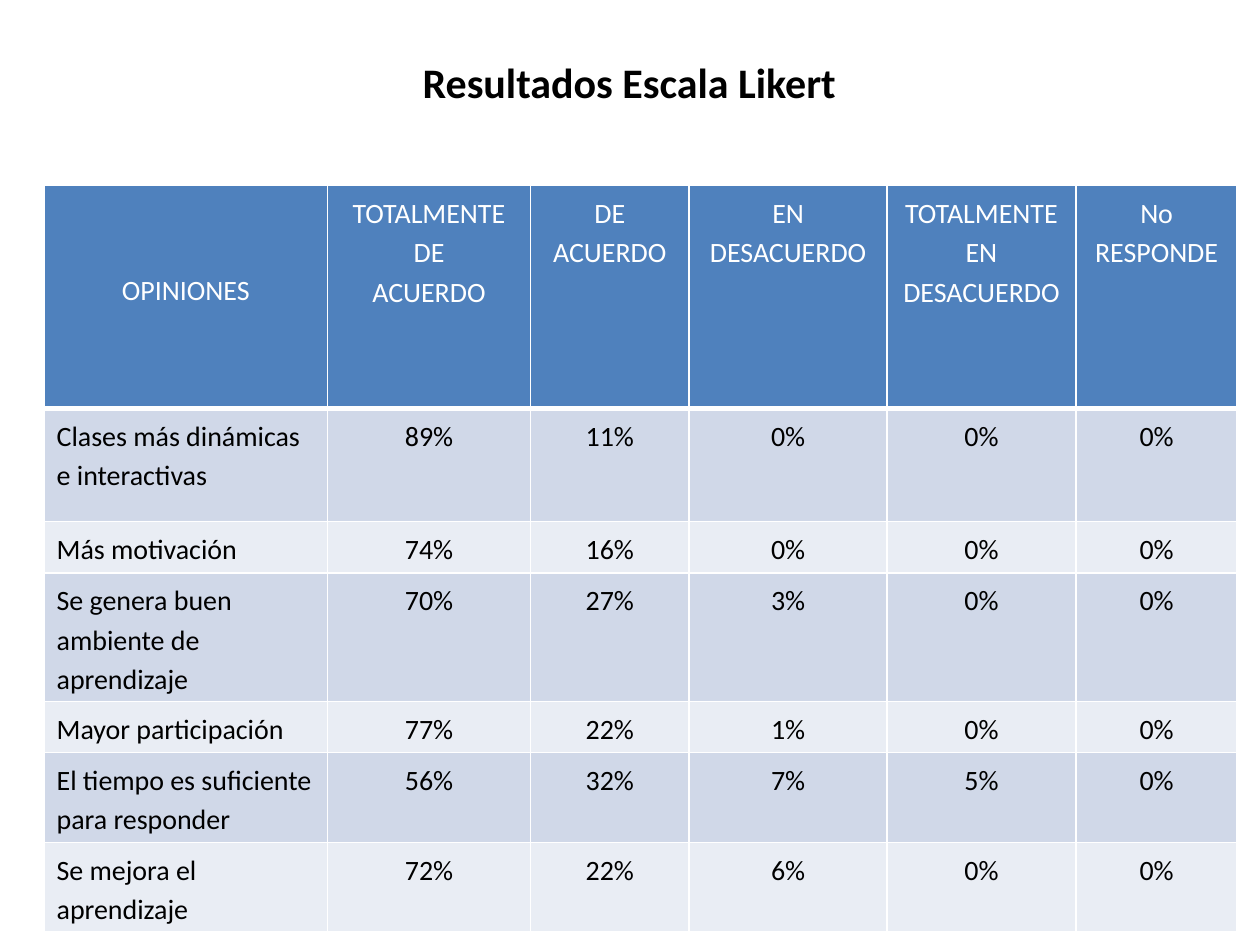
from dataclasses import dataclass

from lxml import etree
from pptx import Presentation
from pptx.dml.color import RGBColor
from pptx.enum.text import MSO_ANCHOR, PP_ALIGN
from pptx.oxml.ns import qn
from pptx.slide import Slide
from pptx.table import Table, _Cell
from pptx.text.text import _Paragraph
from pptx.util import Inches, Length, Pt

CENTER = PP_ALIGN.CENTER
LEFT = PP_ALIGN.LEFT
TOP = MSO_ANCHOR.TOP
MIDDLE = MSO_ANCHOR.MIDDLE

SLIDE_WIDTH = Inches(10)
SLIDE_HEIGHT = Inches(7.5)
FONT = "Calibri"
WHITE = "FFFFFF"
BLACK = "000000"
HEADER_BLUE = "4F81BD"
BANDS = ("D0D8E8", "E9EDF4")

COLUMN_SHARES = (0.225, 0.161, 0.126, 0.157, 0.15, 0.128)
HEADER_SHARE = 0.236


@dataclass(frozen=True)
class Opinion:
    statement: str
    percentages: tuple[int, ...]
    height_share: float


HEADINGS = (
    ("OPINIONES",),
    ("TOTALMENTE", "DE", "ACUERDO"),
    ("DE ACUERDO",),
    ("EN DESACUERDO",),
    ("TOTALMENTE", "EN", "DESACUERDO"),
    ("No", "RESPONDE"),
)
OPINIONS = (
    Opinion("Clases más dinámicas e interactivas", (89, 11, 0, 0, 0), 0.12),
    Opinion("Más motivación", (74, 16, 0, 0, 0), 0.05),
    Opinion("Se genera buen ambiente de aprendizaje", (70, 27, 3, 0, 0), 0.06),
    Opinion("Mayor participación", (77, 22, 1, 0, 0), 0.05),
    Opinion("El tiempo es suficiente para responder", (56, 32, 7, 5, 0), 0.08),
    Opinion("Se mejora el aprendizaje", (72, 22, 6, 0, 0), 0.05),
)


def across(share: float) -> Length:
    return Length(round(SLIDE_WIDTH * share))


def down(share: float) -> Length:
    return Length(round(SLIDE_HEIGHT * share))


def color(value: str) -> RGBColor:
    return RGBColor.from_string(value)


def add_run(paragraph: _Paragraph, text: str, size: int, ink: str, bold: bool = False) -> None:
    run = paragraph.add_run()
    run.text = text
    run.font.name = FONT
    run.font.size = Pt(size)
    run.font.bold = bold
    run.font.color.rgb = color(ink)


def add_borders(cell: _Cell, bottom_points: int) -> None:
    properties = cell._tc.get_or_add_tcPr()
    for side, points in (("L", 1), ("R", 1), ("T", 1), ("B", bottom_points)):
        line = etree.SubElement(properties, qn(f"a:ln{side}"), w=str(Pt(points)))
        fill = etree.SubElement(line, qn("a:solidFill"))
        etree.SubElement(fill, qn("a:srgbClr"), val=WHITE)


def fill_cell(cell: _Cell, lines: tuple[str, ...], background: str, ink: str,
              alignment: PP_ALIGN = CENTER, bottom_points: int = 1) -> None:
    add_borders(cell, bottom_points)
    cell.fill.solid()
    cell.fill.fore_color.rgb = color(background)
    cell.vertical_anchor = TOP
    frame = cell.text_frame
    for index, text in enumerate(lines):
        paragraph = frame.add_paragraph() if index else frame.paragraphs[0]
        paragraph.alignment = alignment
        paragraph.line_spacing = 1.15
        add_run(paragraph, text, 16, ink)


def add_title(slide: Slide) -> None:
    title = slide.shapes.add_textbox(across(0.035), down(0.04), across(0.929), down(0.092))
    frame = title.text_frame
    frame.word_wrap = True
    frame.vertical_anchor = MIDDLE
    heading = frame.paragraphs[0]
    heading.alignment = CENTER
    add_run(heading, "Resultados Escala Likert", 24, BLACK, bold=True)


def fill_headings(table: Table) -> None:
    for column, lines in enumerate(HEADINGS):
        fill_cell(table.cell(0, column), lines, HEADER_BLUE, WHITE, bottom_points=3)
    opinions_heading = table.cell(0, 0)
    opinions_heading.vertical_anchor = MIDDLE
    opinions_heading.margin_bottom = Inches(0.19)


def fill_opinions(table: Table) -> None:
    for row, opinion in enumerate(OPINIONS, start=1):
        band = BANDS[(row - 1) % len(BANDS)]
        fill_cell(table.cell(row, 0), (opinion.statement,), band, BLACK, LEFT)
        for column, percentage in enumerate(opinion.percentages, start=1):
            fill_cell(table.cell(row, column), (f"{percentage}%",), band, BLACK)


def add_results(slide: Slide) -> None:
    row_shares = (HEADER_SHARE, *(opinion.height_share for opinion in OPINIONS))
    table = slide.shapes.add_table(
        len(row_shares), len(COLUMN_SHARES), across(0.035), down(0.196),
        across(sum(COLUMN_SHARES)), down(sum(row_shares)),
    ).table
    for column, share in zip(table.columns, COLUMN_SHARES):
        column.width = across(share)
    for row, share in zip(table.rows, row_shares):
        row.height = down(share)
    fill_headings(table)
    fill_opinions(table)


def main() -> None:
    presentation = Presentation()
    presentation.slide_width = SLIDE_WIDTH
    presentation.slide_height = SLIDE_HEIGHT
    slide = presentation.slides.add_slide(presentation.slide_layouts[6])
    add_title(slide)
    add_results(slide)
    presentation.save("out.pptx")


if __name__ == "__main__":
    main()
